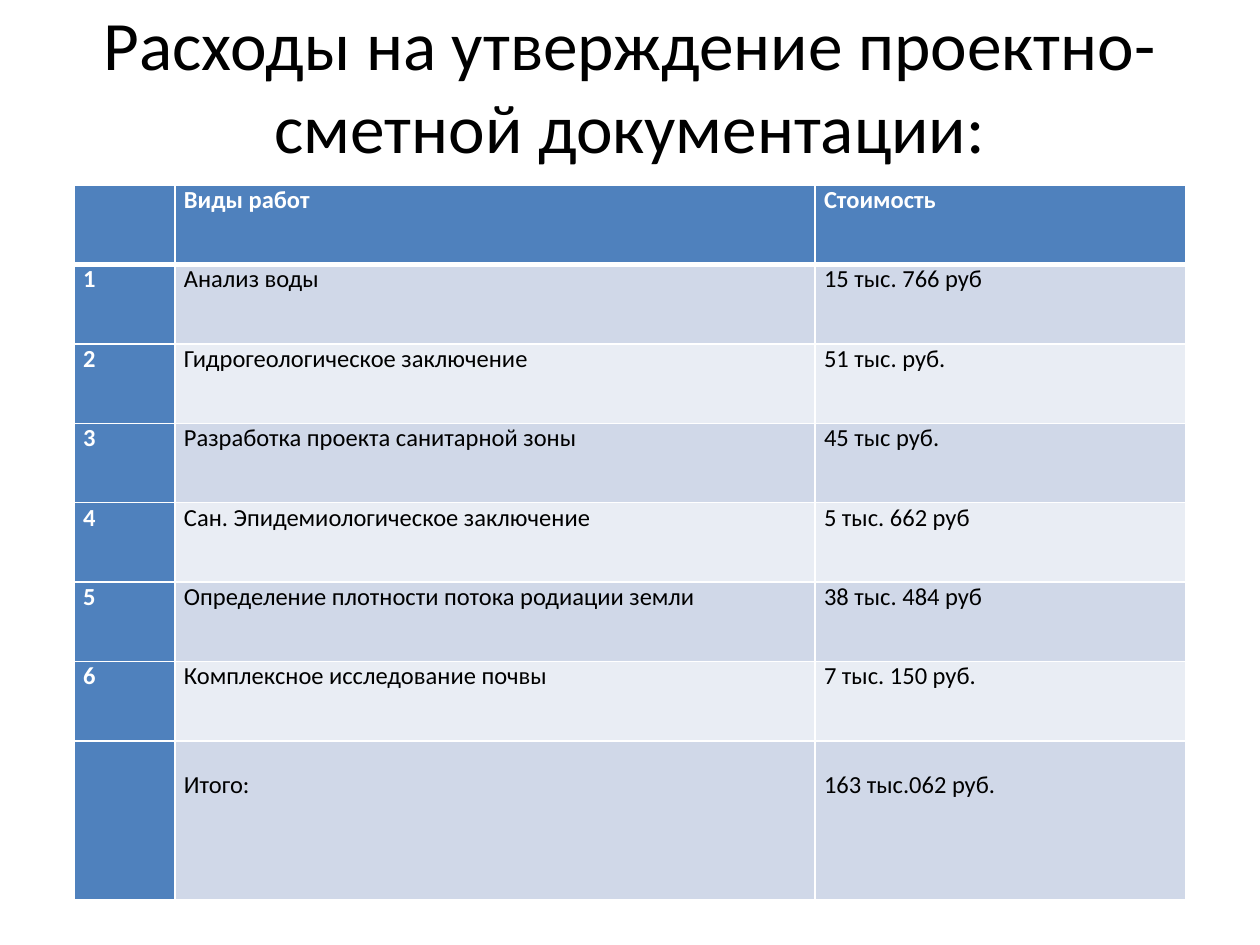
from pptx import Presentation, util as u
from pptx.dml.color import RGBColor
from pptx.enum import text
from pptx.oxml import parse_xml
from pptx.oxml.ns import nsdecls

TITLE = "Расходы на утверждение проектно-сметной документации:"
ROWS = [
    ("", "Виды работ", "Стоимость"),
    ("1", "Анализ воды", "15 тыс. 766 руб"),
    ("2", "Гидрогеологическое заключение", "51 тыс. руб."),
    ("3", "Разработка проекта санитарной зоны", "45 тыс руб."),
    ("4", "Сан. Эпидемиологическое заключение", "5 тыс. 662 руб"),
    ("5", "Определение плотности потока родиации земли", "38 тыс. 484 руб"),
    ("6", "Комплексное исследование почвы", "7 тыс. 150 руб."),
    ("", "Итого:", "163 тыс.062 руб."),
]
COLS = (0.8, 5.08, 2.94)
ROW = 0.63
LAST = len(ROWS) - 1
FONT = "Calibri"
BLACK = RGBColor(0, 0, 0)
WHITE = RGBColor(255, 255, 255)
BLUE = RGBColor(0x4F, 0x81, 0xBD)
BANDS = (RGBColor(0xE9, 0xED, 0xF4), RGBColor(0xD0, 0xD8, 0xE8))


def style(font, size, color, bold=False):
    font.name, font.size, font.bold = FONT, u.Pt(size), bold
    font.color.rgb = color


def border(cell, side, width):
    line = parse_xml(
        f'<a:{side} {nsdecls("a")} w="{u.Pt(width)}"><a:solidFill>'
        f'<a:srgbClr val="{WHITE}"/></a:solidFill></a:{side}>')
    cell._tc.get_or_add_tcPr().append(line)


def fill_cell(cell, label, row, col):
    head = row == 0 or col == 0
    for side in ("lnL", "lnR", "lnT", "lnB"):
        edge = (row, side) in ((0, "lnB"), (1, "lnT"))
        border(cell, side, 3 if edge else 1)
    cell.fill.solid()
    cell.fill.fore_color.rgb = BLUE if head else BANDS[row % 2]
    cell.margin_left = cell.margin_right = u.Inches(0.07)
    cell.margin_top = u.Inches(0.23 if row == LAST else 0)
    cell.margin_bottom = 0
    if label:
        cell.text_frame.text = label
        run = cell.text_frame.paragraphs[0].runs[0]
        style(run.font, 14, WHITE if head else BLACK, head)


deck = Presentation()
deck.slide_width, deck.slide_height = u.Inches(10), u.Inches(7.5)
slide = deck.slides.add_slide(deck.slide_layouts[6])

box = slide.shapes.add_textbox(*map(u.Inches, (0.5, 0.3, 9, 1.25)))
frame = box.text_frame
frame.word_wrap = True
frame.vertical_anchor = text.MSO_ANCHOR.BOTTOM
frame.margin_bottom = u.Inches(0.22)
frame.text = TITLE
title = frame.paragraphs[0]
title.alignment = text.PP_ALIGN.CENTER
style(title.runs[0].font, 39.6, BLACK)

area = (0.59, 1.47, sum(COLS), ROW * (len(ROWS) + 1))
table = slide.shapes.add_table(
    len(ROWS), len(COLS), *map(u.Inches, area)).table
for col, width in zip(table.columns, COLS):
    col.width = u.Inches(width)
for r, labels in enumerate(ROWS):
    table.rows[r].height = u.Inches(ROW * (2 if r == LAST else 1))
    for c, label in enumerate(labels):
        fill_cell(table.cell(r, c), label, r, c)

deck.save("out.pptx")
